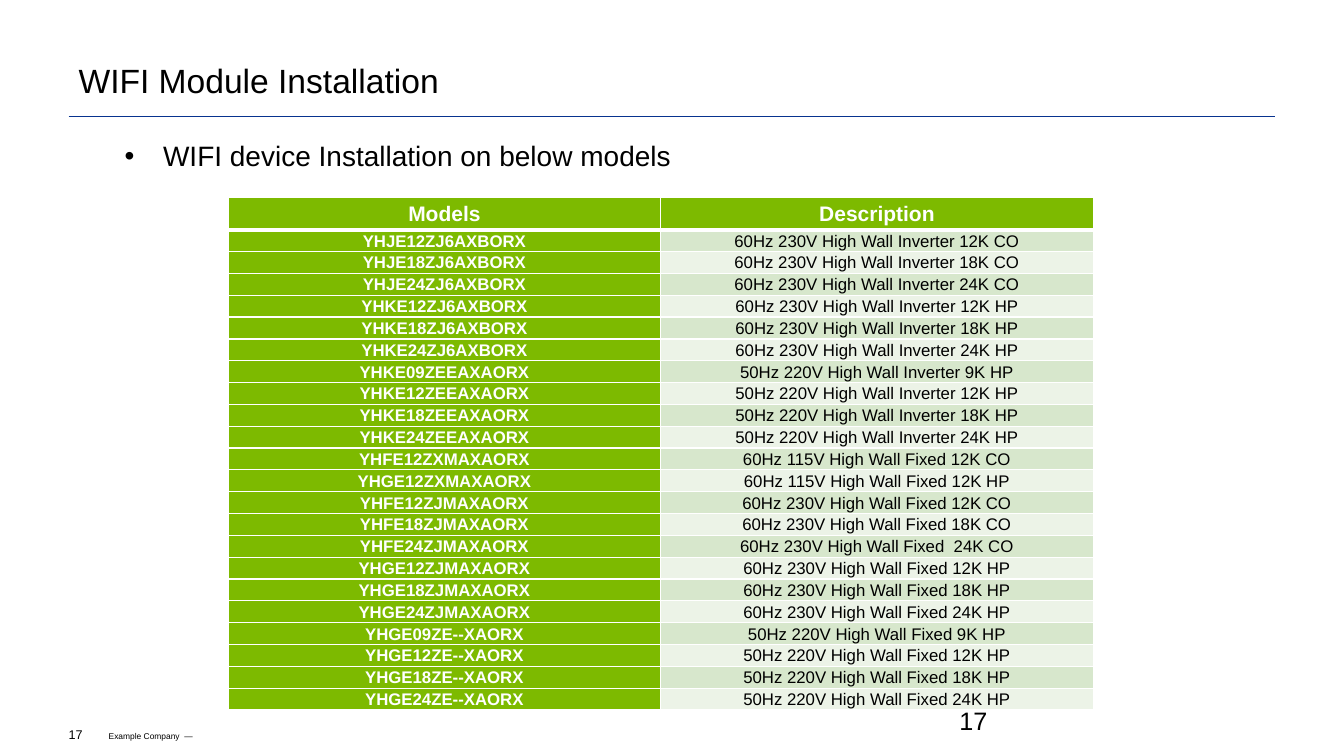
from dataclasses import dataclass

import pptx
import pptx.dml.color
import pptx.enum.shapes
import pptx.enum.text
import pptx.util
from lxml import etree
from pptx.oxml.ns import qn

Cm = pptx.util.Cm
Pt = pptx.util.Pt
ANCHOR = pptx.enum.text.MSO_ANCHOR
ALIGN = pptx.enum.text.PP_ALIGN


@dataclass(frozen=True)
class Theme:
    font: str = "Arial"
    black: str = "000000"
    white: str = "FFFFFF"
    rule: str = "08338F"
    green: str = "7DBA00"
    bands: tuple = ("D7E7CC", "ECF3E7")
    title: int = 24
    bullet: int = 20
    page: int = 18
    header: int = 15
    body: int = 12
    number: int = 9
    footer: int = 6


THEME = Theme()

HEADER = ("Models", "Description")
MODELS = [
    ("YHJE12ZJ6AXBORX", "60Hz 230V High Wall Inverter 12K CO"),
    ("YHJE18ZJ6AXBORX", "60Hz 230V High Wall Inverter 18K CO"),
    ("YHJE24ZJ6AXBORX", "60Hz 230V High Wall Inverter 24K CO"),
    ("YHKE12ZJ6AXBORX", "60Hz 230V High Wall Inverter 12K HP"),
    ("YHKE18ZJ6AXBORX", "60Hz 230V High Wall Inverter 18K HP"),
    ("YHKE24ZJ6AXBORX", "60Hz 230V High Wall Inverter 24K HP"),
    ("YHKE09ZEEAXAORX", "50Hz 220V High Wall Inverter 9K HP"),
    ("YHKE12ZEEAXAORX", "50Hz 220V High Wall Inverter 12K HP"),
    ("YHKE18ZEEAXAORX", "50Hz 220V High Wall Inverter 18K HP"),
    ("YHKE24ZEEAXAORX", "50Hz 220V High Wall Inverter 24K HP"),
    ("YHFE12ZXMAXAORX", "60Hz 115V High Wall Fixed 12K CO"),
    ("YHGE12ZXMAXAORX", "60Hz 115V High Wall Fixed 12K HP"),
    ("YHFE12ZJMAXAORX", "60Hz 230V High Wall Fixed 12K CO"),
    ("YHFE18ZJMAXAORX", "60Hz 230V High Wall Fixed 18K CO"),
    ("YHFE24ZJMAXAORX", "60Hz 230V High Wall Fixed  24K CO"),
    ("YHGE12ZJMAXAORX", "60Hz 230V High Wall Fixed 12K HP"),
    ("YHGE18ZJMAXAORX", "60Hz 230V High Wall Fixed 18K HP"),
    ("YHGE24ZJMAXAORX", "60Hz 230V High Wall Fixed 24K HP"),
    ("YHGE09ZE--XAORX", "50Hz 220V High Wall Fixed 9K HP"),
    ("YHGE12ZE--XAORX", "50Hz 220V High Wall Fixed 12K HP"),
    ("YHGE18ZE--XAORX", "50Hz 220V High Wall Fixed 18K HP"),
    ("YHGE24ZE--XAORX", "50Hz 220V High Wall Fixed 24K HP"),
]


def rgb(color):
    return pptx.dml.color.RGBColor.from_string(color)


def apply(target, **values):
    for name, value in values.items():
        setattr(target, name, value)


def margins(target, left, top, right, bottom):
    apply(target, margin_left=Cm(left), margin_top=Cm(top),
          margin_right=Cm(right), margin_bottom=Cm(bottom))


def write(p, text, size, color=THEME.black, bold=False):
    r = p.add_run()
    r.text = text
    apply(r.font, name=THEME.font, size=Pt(size), bold=bold)
    r.font.color.rgb = rgb(color)


def set_title(s, text):
    sp = s.shapes.title
    apply(sp, left=Cm(1.73), top=Cm(0.53), width=Cm(30.4), height=Cm(2.21))
    tf = sp.text_frame
    apply(tf, word_wrap=True, vertical_anchor=ANCHOR.BOTTOM,
          auto_size=pptx.enum.text.MSO_AUTO_SIZE.NONE)
    margins(tf, 0.25, 0.13, 0.25, 0.2)
    p = tf.paragraphs[0]
    apply(p, alignment=ALIGN.LEFT, line_spacing=0.9)
    write(p, text, THEME.title)


def add_text(s, text, size, box, insets=(0, 0, 0, 0), anchor=ANCHOR.TOP):
    """Add a one-paragraph text box and return the paragraph."""
    tf = s.shapes.add_textbox(*map(Cm, box)).text_frame
    apply(tf, word_wrap=True, vertical_anchor=anchor)
    margins(tf, *insets)
    p = tf.paragraphs[0]
    write(p, text, size)
    return p


def add_bullet(p, indent, hanging):
    pPr = p._p.get_or_add_pPr()
    pPr.set("marL", str(Cm(indent)))
    pPr.set("indent", str(-Cm(hanging)))
    etree.SubElement(pPr, qn("a:buFont"), typeface=THEME.font)
    etree.SubElement(pPr, qn("a:buChar"), char="•")
    p.line_spacing = 0.9


def add_rule(s, x1, x2, y):
    line = s.shapes.add_connector(pptx.enum.shapes.MSO_CONNECTOR.STRAIGHT,
                                  Cm(x1), Cm(y), Cm(x2), Cm(y))
    line.line.color.rgb = rgb(THEME.rule)
    line.line.width = Pt(0.75)
    etree.SubElement(line._element.spPr, qn("a:effectLst"))


def set_borders(cell, **widths):
    """Draw white borders; widths in points are keyed by side: L, R, T, B."""
    tcPr = cell._tc.get_or_add_tcPr()
    for side, width in widths.items():
        ln = etree.SubElement(tcPr, qn(f"a:ln{side}"), w=str(Pt(width)))
        fill = etree.SubElement(ln, qn("a:solidFill"))
        etree.SubElement(fill, qn("a:srgbClr"), val=THEME.white)


def fill_cell(cell, text, size, fill, color, bold):
    margins(cell, 0.03, 0.03, 0.03, 0)
    cell.vertical_anchor = ANCHOR.MIDDLE
    cell.fill.solid()
    cell.fill.fore_color.rgb = rgb(fill)
    p = cell.text_frame.paragraphs[0]
    p.alignment = ALIGN.CENTER
    write(p, text, size, color, bold)


def add_models_table(s, left, top, col_width, header_height, row_height):
    rows = [HEADER, *MODELS]
    height = header_height + row_height * len(MODELS)
    table = s.shapes.add_table(len(rows), len(HEADER), Cm(left), Cm(top),
                               Cm(col_width * len(HEADER)), Cm(height)).table
    apply(table, first_row=False, horz_banding=False)
    for col in table.columns:
        col.width = Cm(col_width)
    for i, row in enumerate(rows):
        is_header = i == 0
        table.rows[i].height = Cm(header_height if is_header else row_height)
        for j, text in enumerate(row):
            cell = table.cell(i, j)
            set_borders(cell, L=1, R=1, T=3 if i == 1 else 1, B=3 if is_header else 1)
            strong = is_header or j == 0
            fill_cell(cell, text, THEME.header if is_header else THEME.body,
                      THEME.green if strong else THEME.bands[(i - 1) % 2],
                      THEME.white if strong else THEME.black, strong)


def main():
    prs = pptx.Presentation()
    apply(prs, slide_width=Cm(33.87), slide_height=Cm(19.05))
    s = prs.slides.add_slide(prs.slide_layouts[5])
    add_rule(s, 1.73, 32.13, 2.93)
    add_text(s, "Example Company  —", THEME.footer, (2.74, 18.42, 4.06, 0.25))
    add_text(s, "17", THEME.number, (1.73, 18.21, 0.99, 0.61), anchor=ANCHOR.MIDDLE)
    add_text(s, "17", THEME.page, (23.93, 17.65, 7.62, 1.02), (0.25, 0.13, 0.25, 0.13))
    set_title(s, "WIFI Module Installation")
    p = add_text(s, "WIFI device Installation on below models", THEME.bullet,
                 (3.12, 3.56, 26.39, 0.81), (0, 0.03, 0, 0))
    add_bullet(p, 0.99, 0.97)
    add_models_table(s, 5.75, 4.98, 10.9, 0.81, 0.55)
    prs.save("out.pptx")


if __name__ == "__main__":
    main()
